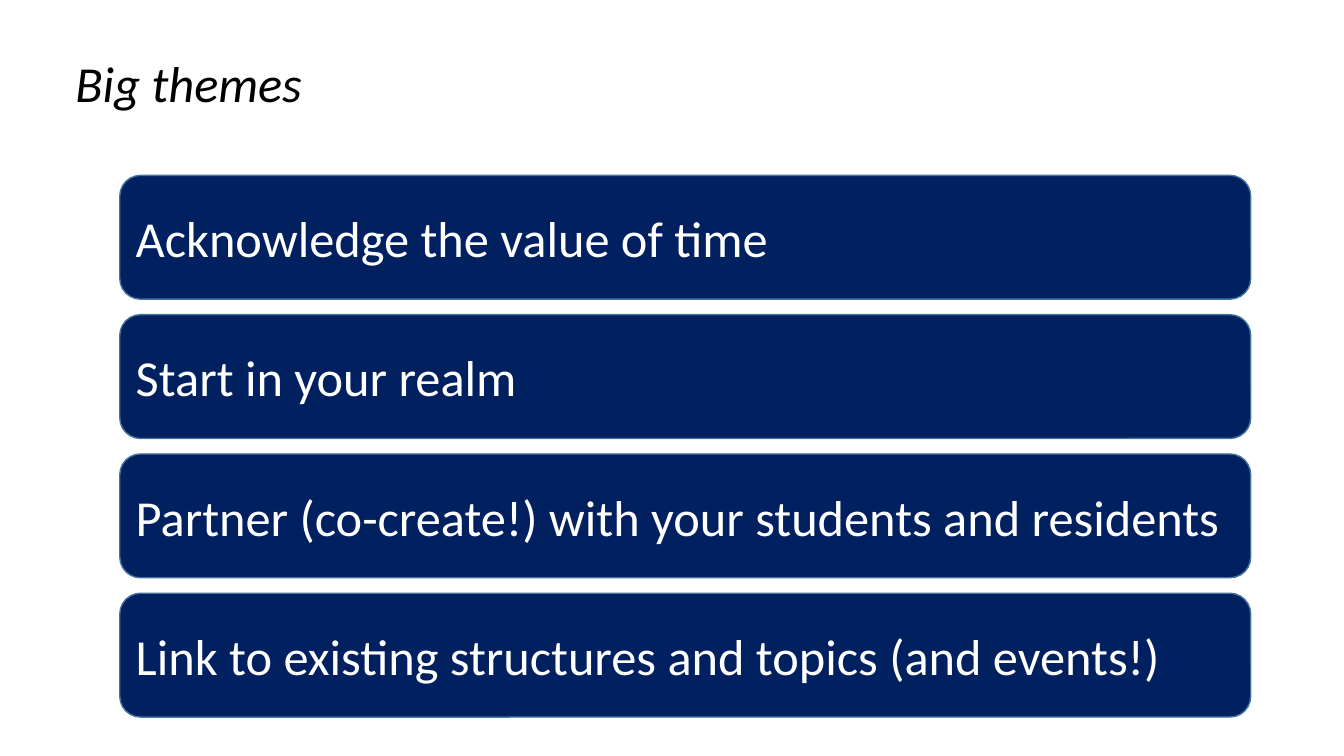
from pptx import Presentation
from pptx import util as u
from pptx.dml.color import RGBColor
from pptx.enum import shapes, text

TITLE = "Big themes"
THEMES = [
    "Acknowledge the value of time",
    "Start in your realm",
    "Partner (co-create!) with your students and residents",
    "Link to existing structures and topics (and events!)",
]

THEME = {
    "bar": RGBColor(0x00, 0x20, 0x60),
    "edge": RGBColor(0x43, 0x73, 0x9E),
    "edge_width": u.Pt(1),
    "title": {"name": "Calibri", "size": u.Pt(36), "italic": True},
    "label": {"name": "Calibri", "size": u.Pt(36)},
    "title_color": RGBColor(0, 0, 0),
    "label_color": RGBColor(255, 255, 255),
}

BAR_LEFT, BAR_TOP, BAR_WIDTH, BAR_HEIGHT = 3.02, 4.42, 28.5, 3.12
BAR_PITCH = 3.51


def write(sp, words, style, color, anchor):
    tf = sp.text_frame
    tf.word_wrap = True
    tf.vertical_anchor = anchor
    p = tf.paragraphs[0]
    p.alignment = text.PP_ALIGN.LEFT
    r = p.add_run()
    r.text = words
    for key, value in style.items():
        setattr(r.font, key, value)
    r.font.color.rgb = color


def add_bar(s, i, words):
    sp = s.shapes.add_shape(
        shapes.MSO_SHAPE.ROUNDED_RECTANGLE,
        u.Cm(BAR_LEFT), u.Cm(BAR_TOP + i * BAR_PITCH),
        u.Cm(BAR_WIDTH), u.Cm(BAR_HEIGHT))
    sp.shadow.inherit = False
    sp.fill.solid()
    sp.fill.fore_color.rgb = THEME["bar"]
    sp.line.color.rgb = THEME["edge"]
    sp.line.width = THEME["edge_width"]
    write(sp, words, THEME["label"], THEME["label_color"], text.MSO_ANCHOR.MIDDLE)


def main():
    prs = Presentation()
    prs.slide_width, prs.slide_height = u.Cm(33.87), u.Cm(19.05)
    s = prs.slides.add_slide(prs.slide_layouts[6])
    title = s.shapes.add_textbox(u.Cm(1.65), u.Cm(1.19), u.Cm(30.58), u.Cm(1.8))
    write(title, TITLE, THEME["title"], THEME["title_color"], text.MSO_ANCHOR.TOP)
    title.text_frame.auto_size = text.MSO_AUTO_SIZE.SHAPE_TO_FIT_TEXT
    for i, words in enumerate(THEMES):
        add_bar(s, i, words)
    prs.save("out.pptx")


if __name__ == "__main__":
    main()
